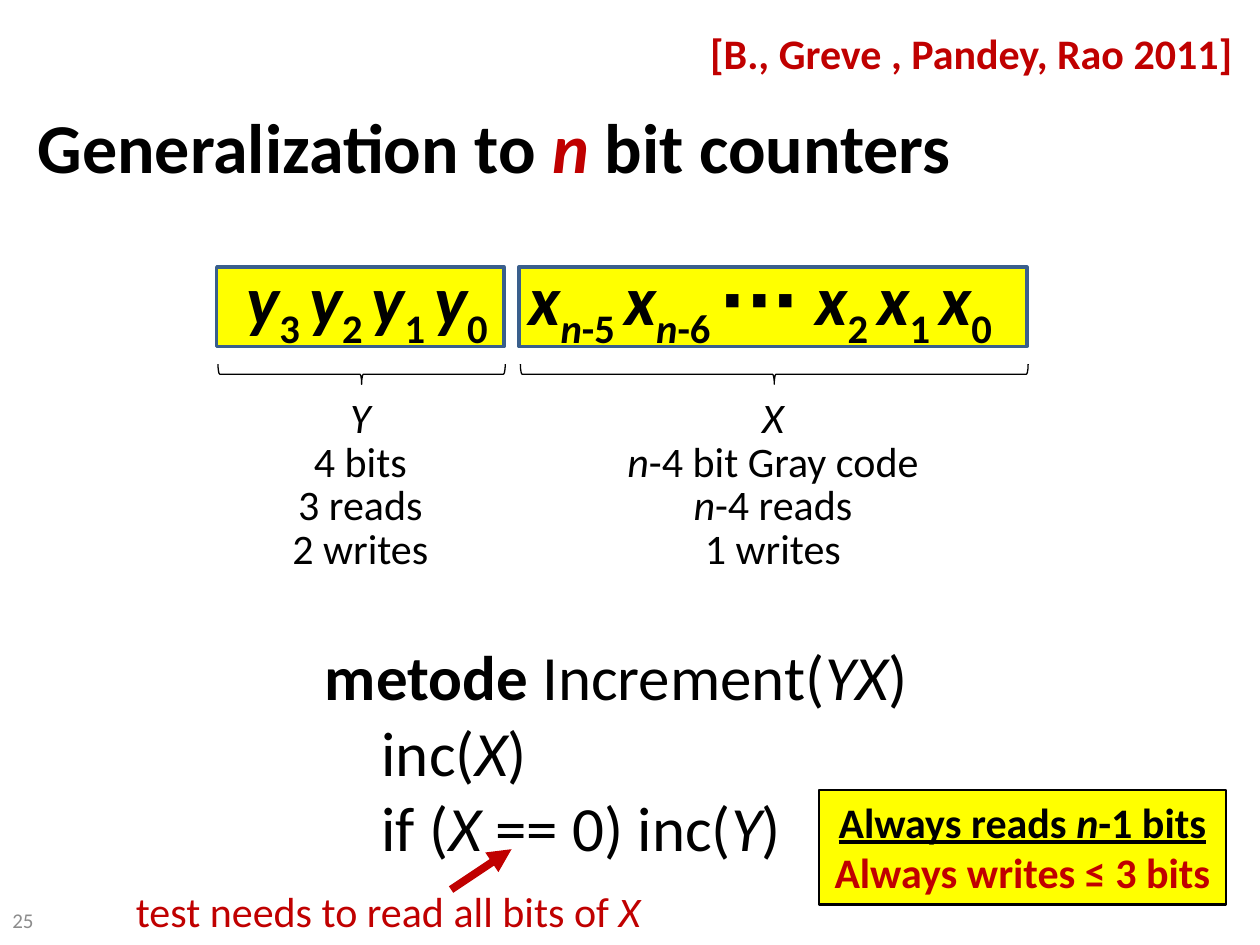
from pptx import Presentation
from pptx.dml.color import RGBColor
from pptx.enum.shapes import MSO_CONNECTOR, MSO_SHAPE
from pptx.enum.text import MSO_ANCHOR, MSO_AUTO_SIZE, PP_ALIGN
from pptx.oxml.ns import qn
from pptx.util import Inches, Pt
from lxml import etree

BLACK = RGBColor(0x00, 0x00, 0x00)
RED = RGBColor(0xC0, 0x00, 0x00)
YELLOW = RGBColor(0xFF, 0xFF, 0x00)
BLUE = RGBColor(0x3A, 0x5F, 0x8C)
GRAY = RGBColor(0x8C, 0x8C, 0x8C)
FONT = "Calibri"

LEFT, CENTER, RIGHT = PP_ALIGN.LEFT, PP_ALIGN.CENTER, PP_ALIGN.RIGHT
TOP, MIDDLE = MSO_ANCHOR.TOP, MSO_ANCHOR.MIDDLE
NO_AUTOFIT = MSO_AUTO_SIZE.NONE
RECTANGLE, BRACE = MSO_SHAPE.RECTANGLE, MSO_SHAPE.RIGHT_BRACE
STRAIGHT = MSO_CONNECTOR.STRAIGHT

STYLE_FLAGS = {"b": "bold", "i": "italic", "u": "underline"}
CODE_INDENT = Inches(0.45)
GROUP_GAP = Pt(18)


def add_run(paragraph, text, flags, size, color):
    """Flags: b bold, i italic, u underline, s subscript, r red, g wide gap."""
    run = paragraph.add_run()
    run.text = text
    values = {"name": FONT, "size": Pt(size)}
    values.update({name: flag in flags for flag, name in STYLE_FLAGS.items()})
    for name, value in values.items():
        setattr(run.font, name, value)
    run.font.color.rgb = RED if "r" in flags else color
    properties = run._r.get_or_add_rPr()
    if "s" in flags:
        properties.set("baseline", "-25000")
    if "g" in flags:
        properties.set("spc", str(int(GROUP_GAP.pt * 100)))


def write_text(shape, lines, size, color=BLACK, align=LEFT, anchor=TOP,
               spacing=None, indents=()):
    """Fill a shape with lines, each a list of (text, flags) pairs."""
    frame = shape.text_frame
    frame_format = {"word_wrap": True, "auto_size": NO_AUTOFIT, "vertical_anchor": anchor}
    for name, value in frame_format.items():
        setattr(frame, name, value)
    for index, runs in enumerate(lines):
        paragraph = frame.paragraphs[0] if index == 0 else frame.add_paragraph()
        paragraph.alignment = align
        if spacing:
            paragraph.line_spacing = Pt(spacing)
        if indents and indents[index]:
            paragraph._p.get_or_add_pPr().set("marL", str(indents[index]))
        for text, flags in runs:
            add_run(paragraph, text, flags, size, color)


def add_text(slide, box, lines, size, **text_format):
    shape = slide.shapes.add_textbox(*map(Inches, box))
    write_text(shape, lines, size, **text_format)


def add_outlined(slide, preset, box, line_color, line_width, fill=None):
    shape = slide.shapes.add_shape(preset, *map(Inches, box))
    shape.shadow.inherit = False
    if fill is None:
        shape.fill.background()
    else:
        shape.fill.solid()
        shape.fill.fore_color.rgb = fill
    shape.line.color.rgb = line_color
    shape.line.width = Pt(line_width)
    return shape


def add_title(slide, box):
    title = slide.shapes.title
    title.left, title.top, title.width, title.height = map(Inches, box)
    write_text(title, [[("Generalization to ", "b"), ("n", "bir"), (" bit counters", "b")]], 40)


def add_register(slide, box, caption):
    """Yellow box with a brace and a caption below it."""
    left, top, width, height = box
    add_outlined(slide, RECTANGLE, box, BLUE, 2, YELLOW)
    depth = 0.16
    center_x, center_y = left + width / 2 + 0.01, top + height + 0.22
    brace = add_outlined(slide, BRACE,
                         (center_x - depth / 2, center_y - width / 2, depth, width),
                         BLACK, 0.75)
    brace.rotation = 90
    add_text(slide, (left, top + 0.99, width, 1.5), caption, 24, align=CENTER, spacing=25)


def indexed(letter, *indices):
    """Runs for a variable with each subscript; a leading n is italic."""
    runs = []
    for index in indices:
        runs.append((letter, "bi"))
        if index.startswith("n"):
            runs.append(("n", "bis"))
        runs.append((index.removeprefix("n") + " ", "bs"))
    return runs


def add_bits(slide, box):
    runs = indexed("y", "3", "2", "1", "0")
    runs[-1] = ("0", "bs")
    runs += [(" ", "bsg")]
    runs += indexed("x", "n-5", "n-6") + [("∙∙∙ ", "b")] + indexed("x", "2", "1", "0")
    runs[-1] = ("0", "bs")
    add_text(slide, box, [runs], 40, align=CENTER)


def add_method(slide, box):
    lines = [
        [("metode ", "b"), ("Increment(", ""), ("YX", "i"), (")", "")],
        [("inc(", ""), ("X", "i"), (")", "")],
        [("if (", ""), ("X", "i"), (" == 0) inc(", ""), ("Y", "i"), (")", "")],
    ]
    add_text(slide, box, lines, 36, indents=(0, CODE_INDENT, CODE_INDENT))


def add_summary(slide, box):
    shape = add_outlined(slide, RECTANGLE, box, BLACK, 1.5, YELLOW)
    lines = [
        [("Always reads ", "bu"), ("n", "biu"), ("-1 bits", "bu")],
        [("Always writes ≤ 3 bits", "br")],
    ]
    write_text(shape, lines, 24, align=CENTER)


def add_test_note(slide, box):
    """Red remark with an arrow up to the comparison."""
    left, top, width, height = box
    start, end = (left + 2.6, top + 0.08), (left + 3.08, top - 0.24)
    arrow = slide.shapes.add_connector(STRAIGHT, *map(Inches, start + end))
    arrow.line.color.rgb = RED
    arrow.line.width = Pt(4.5)
    etree.SubElement(arrow.line._get_or_add_ln(), qn("a:tailEnd"), type="triangle")
    etree.SubElement(arrow._element.spPr, qn("a:effectLst"))
    add_text(slide, box, [[("test needs to read all bits of ", ""), ("X", "i")]],
             24, color=RED)


def main():
    presentation = Presentation()
    presentation.slide_width = Inches(10)
    presentation.slide_height = Inches(7.5)
    slide = presentation.slides.add_slide(presentation.slide_layouts[5])

    add_title(slide, (0.2, 0.77, 9.06, 0.77))
    add_register(slide, (1.72, 2.12, 2.28, 0.63), [
        [("Y", "i")], [("4 bits", "")], [("3 reads", "")], [("2 writes", "")]])
    add_register(slide, (4.12, 2.12, 4.03, 0.63), [
        [("X", "i")], [("n", "i"), ("-4 bit Gray code", "")],
        [("n", "i"), ("-4 reads", "")], [("1 writes", "")]])
    add_bits(slide, (0.7, 1.98, 8.43, 0.77))
    add_method(slide, (2.48, 5.01, 6.38, 1.92))
    add_summary(slide, (6.5, 6.27, 3.23, 0.91))
    add_text(slide, (3.5, 0.17, 6.38, 0.5), [[("[B., Greve , Pandey, Rao 2011]", "b")]],
             24, color=RED, align=RIGHT)
    add_text(slide, (0, 7.1, 2.33, 0.4), [[("25", "")]], 12, color=GRAY, anchor=MIDDLE)
    add_test_note(slide, (0.98, 6.98, 4.57, 0.5))
    presentation.save("out.pptx")


if __name__ == "__main__":
    main()
